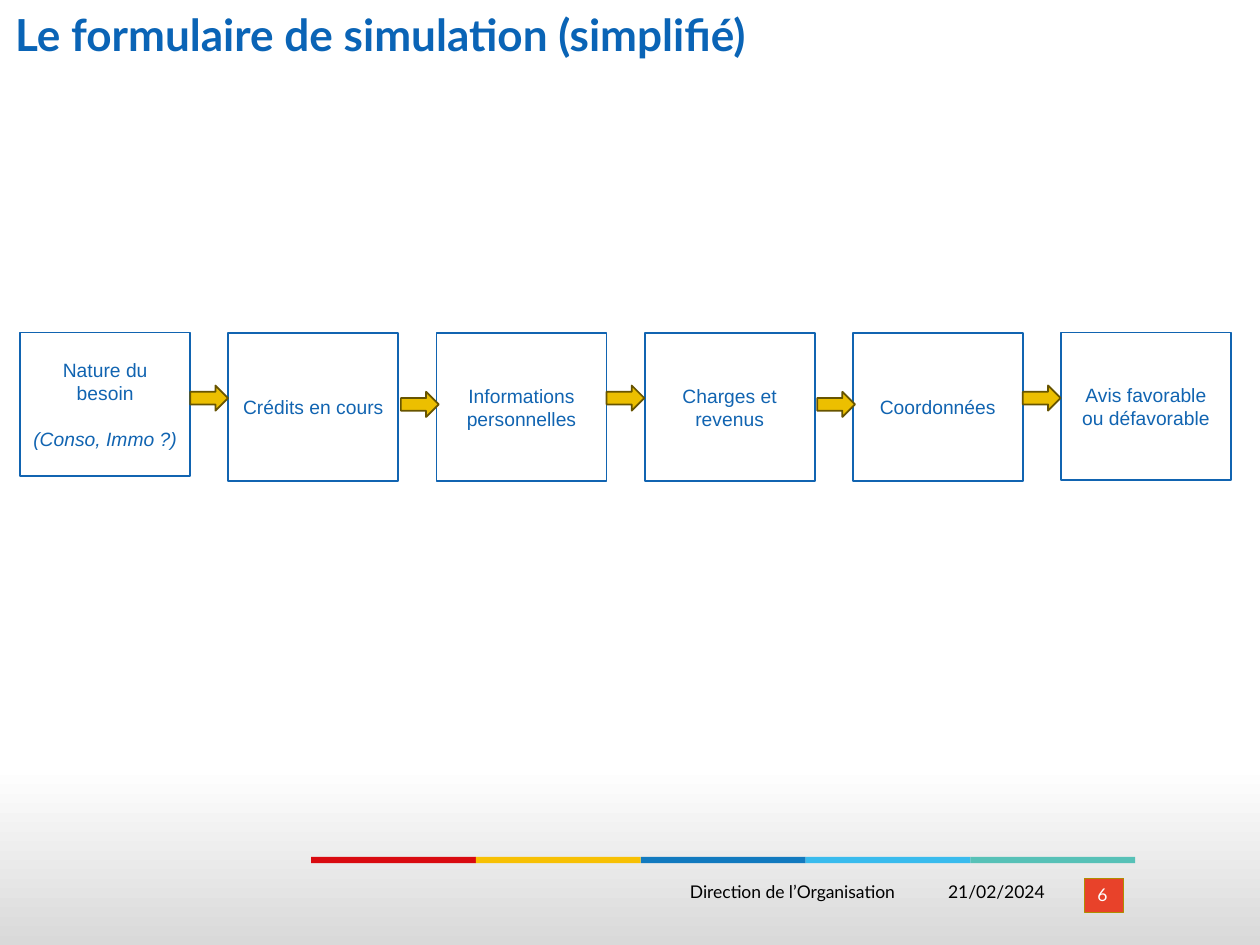
import dataclasses

import pptx
import pptx.util
import pptx.dml.color
import pptx.enum.shapes
import pptx.enum.text

Pt = pptx.util.Pt
KIND = pptx.enum.shapes.MSO_SHAPE
ALIGN = pptx.enum.text.PP_ALIGN
ANCHOR = pptx.enum.text.MSO_ANCHOR
COLS, ROWS = 100, 75


@dataclasses.dataclass(frozen=True)
class Theme:
    title: str = "0A64B6"
    blue: str = "1164B1"
    white: str = "FFFFFF"
    grey: str = "D9D9D9"
    black: str = "000000"
    gold: str = "ECBF00"
    brown: str = "675400"
    badge: str = "E8422A"
    edge: str = "AF8D00"
    bands: tuple = ("D90A10", "F7C003", "127ABF", "39BBED", "57C1B7")
    head: str = "Lato"
    body: str = "Arial"
    large: float = 25.2
    small: float = 10
    step: float = 11
    gap: float = 13


def tint(code):
    return pptx.dml.color.RGBColor.from_string(code)


def write(frame, text, font, size, color, align=ALIGN.LEFT, anchor=ANCHOR.TOP,
          bold=False, note=None, gap=0):
    frame.word_wrap = True
    frame.auto_size = pptx.enum.text.MSO_AUTO_SIZE.NONE
    frame.vertical_anchor = anchor
    lines = text.split("\n") + ([note] if note else [])
    for i, line in enumerate(lines):
        para = frame.add_paragraph() if i else frame.paragraphs[0]
        para.alignment = align
        run = para.add_run()
        run.text = line
        run.font.name = font
        run.font.size = Pt(size)
        run.font.bold = bold
        run.font.color.rgb = tint(color)
        if note and i == len(lines) - 1:
            para.space_before = Pt(gap)
            run.font.italic = True


@dataclasses.dataclass
class Deck:
    theme: Theme
    deck: object
    slide: object = None

    def place(self, col, row, wide, high):
        unit_x = self.deck.slide_width / COLS
        unit_y = self.deck.slide_height / ROWS
        return (round(col * unit_x), round(row * unit_y),
                round(wide * unit_x), round(high * unit_y))

    def start(self):
        self.slide = self.deck.slides.add_slide(self.deck.slide_layouts[5])
        fill = self.slide.background.fill
        fill.gradient()
        fill.gradient_angle = 90
        stops = ((0, self.theme.grey), (0.19, self.theme.white))
        for stop, (spot, code) in zip(fill.gradient_stops, stops):
            stop.position = spot
            stop.color.rgb = tint(code)

    def title(self, text, *cell):
        shape = self.slide.shapes.title
        shape.left, shape.top, shape.width, shape.height = self.place(*cell)
        write(shape.text_frame, text, self.theme.head, self.theme.large,
              self.theme.title, anchor=ANCHOR.MIDDLE, bold=True)

    def shape(self, kind, cell, fill, line=None, width=1):
        shape = self.slide.shapes.add_shape(kind, *self.place(*cell))
        shape.shadow.inherit = False
        shape.fill.solid()
        shape.fill.fore_color.rgb = tint(fill)
        if line:
            shape.line.color.rgb = tint(line)
            shape.line.width = Pt(width)
        else:
            shape.line.fill.background()
        return shape

    def step(self, text, cell, note=None):
        look = self.theme
        box = self.shape(KIND.RECTANGLE, cell, look.white, look.blue)
        write(box.text_frame, text, look.body, look.step, look.blue,
              ALIGN.CENTER, ANCHOR.MIDDLE, note=note, gap=look.gap)

    def arrow(self, *cell):
        self.shape(KIND.RIGHT_ARROW, cell, self.theme.gold, self.theme.brown)

    def label(self, text, cell, color, align):
        box = self.slide.shapes.add_textbox(*self.place(*cell))
        write(box.text_frame, text, self.theme.head, self.theme.small,
              color, align)


def main():
    show = pptx.Presentation()
    show.slide_width = pptx.util.Inches(10)
    show.slide_height = pptx.util.Inches(7.5)
    look = Theme()
    page = Deck(look, show)
    page.start()

    page.shape(KIND.RECTANGLE, (86.1, 69.7, 3.1, 2.7), look.badge, look.edge, 0)
    band = 13.08
    for i, code in enumerate(look.bands):
        page.shape(KIND.RECTANGLE, (24.7 + i * band, 68, band, 0.5), code)

    page.title("Le formulaire de simulation (simplifié)", 0.2, 0.5, 90, 4.4)
    page.label("21/02/2024", (72.8, 69.4, 11.1, 3.5), look.black, ALIGN.RIGHT)
    page.label("Direction de l’Organisation", (35.8, 69.4, 36.2, 3.5),
               look.black, ALIGN.RIGHT)
    page.label("6", (85, 69.7, 5, 2.7), look.white, ALIGN.CENTER)

    steps = (
        ("Nature du besoin", 11.4, "(Conso, Immo ?)"),
        ("Crédits en cours", 11.8, None),
        ("Informations personnelles", 11.8, None),
        ("Charges et revenus", 11.8, None),
        ("Coordonnées", 11.8, None),
        ("Avis favorable\nou défavorable", 11.7, None),
    )
    pitch = 16.52
    for i, (text, high, note) in enumerate(steps):
        page.step(text, (1.6 + i * pitch, 26.4, 13.5, high), note)
    for i in range(len(steps) - 1):
        odd = i % 2
        page.arrow(15.1 + i * pitch + 0.2 * odd, 30.6 + 0.5 * odd, 3, 2)

    show.save("out.pptx")


if __name__ == "__main__":
    main()
